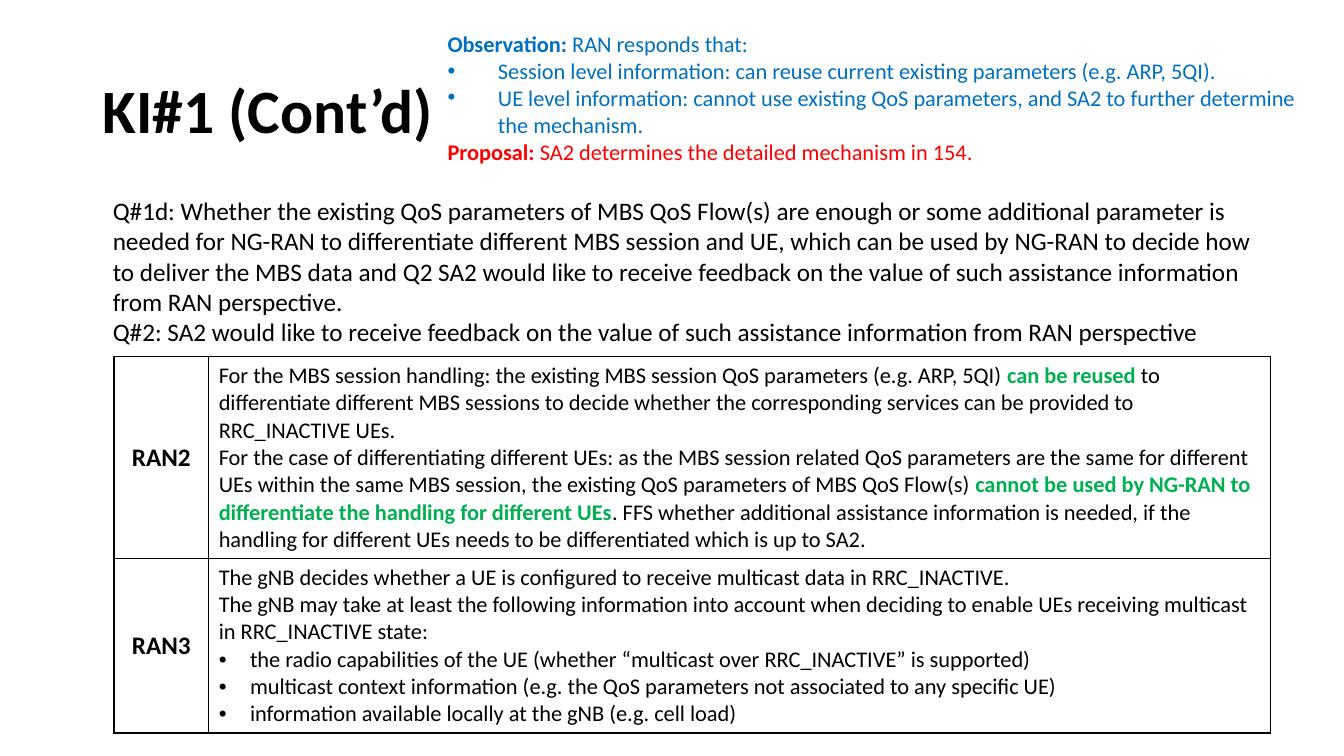
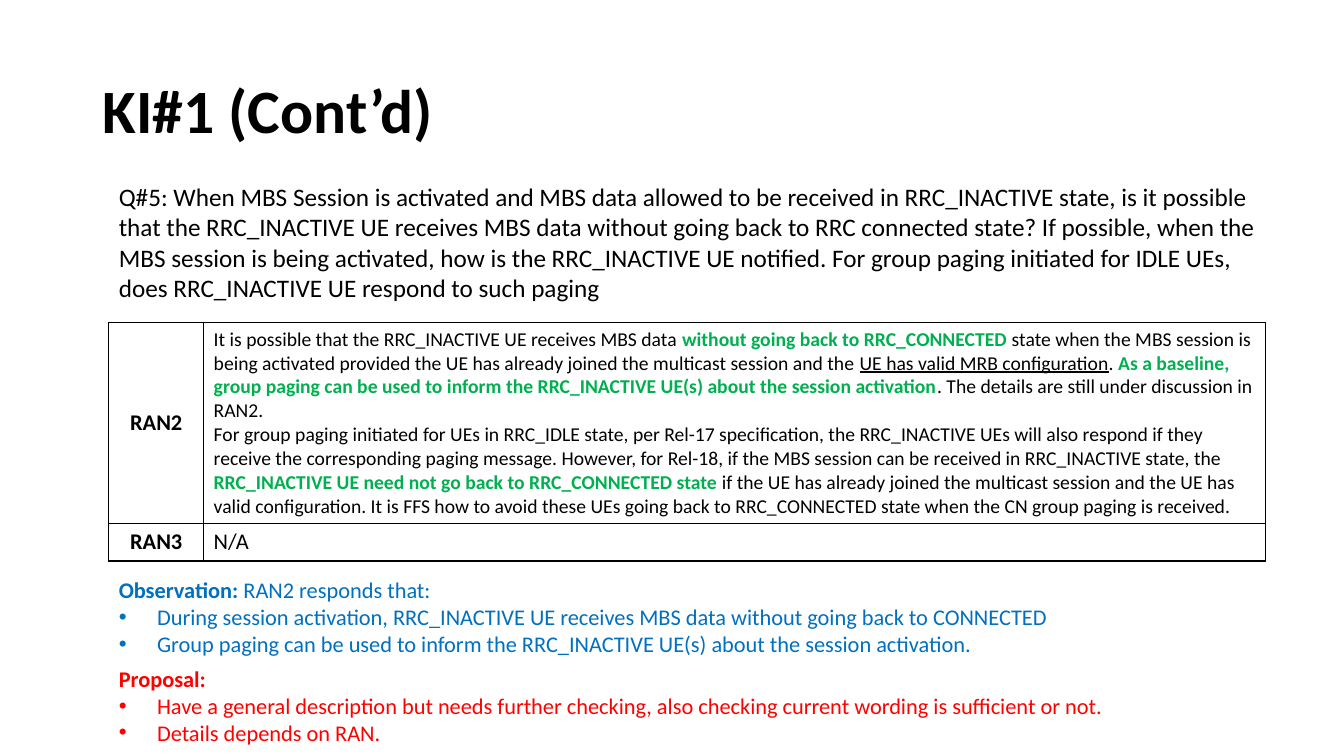
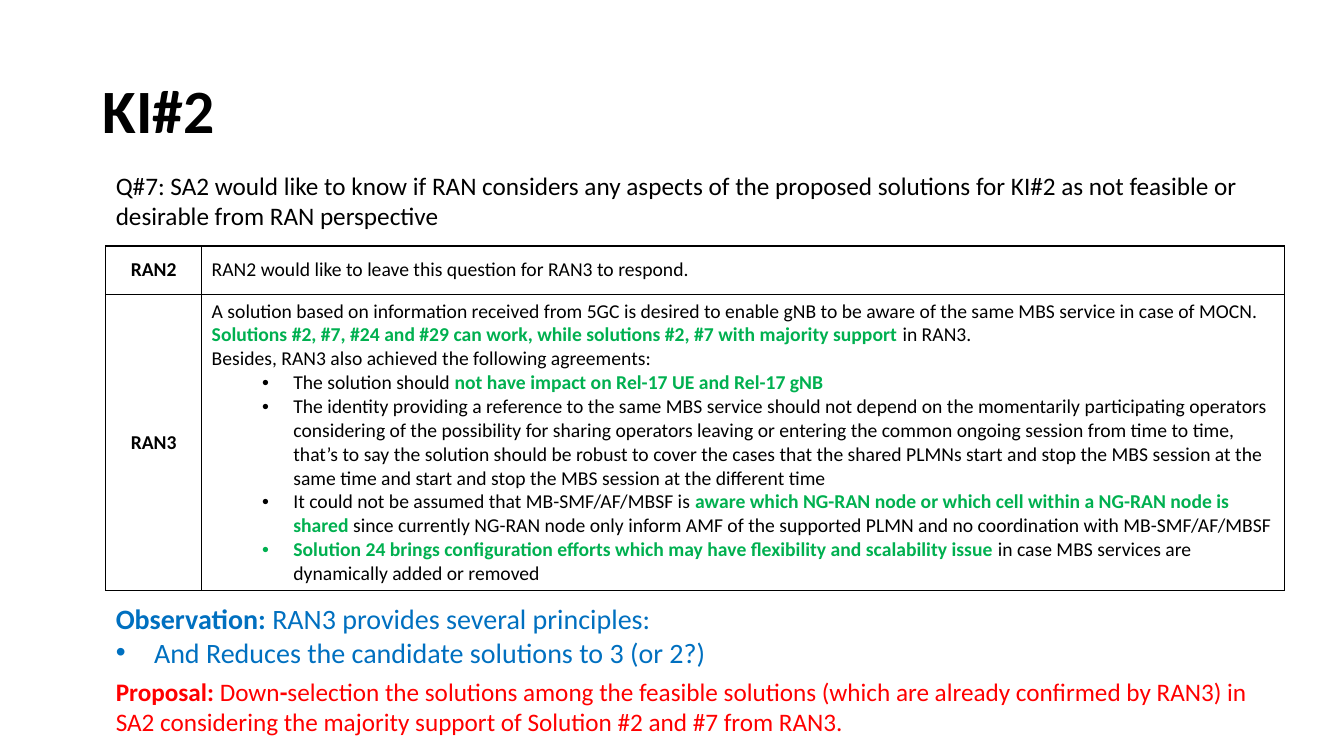
from lxml.etree import SubElement
from pptx import Presentation
from pptx.dml.color import RGBColor
from pptx.enum.text import MSO_ANCHOR, MSO_AUTO_SIZE, PP_ALIGN
from pptx.oxml.ns import qn
from pptx.util import Pt

PX = 9144  # EMU per px, 100 px to the inch
FONT = "Calibri"
COLORS = {"text": "000000", "key": "00B050", "observation": "0070C0", "proposal": "FF0000"}
TITLE_AT = (92, 40, 1150, 145)

# Markup: *bold*, ~underlined~, and "• " opens a bullet
SLIDES = [
    {
        "title": "KI#1 (Cont’d)",
        "table": {
            "at": (113, 354), "cols": (94, 1053), "label_size": 18, "left": 31,
            "rows": [
                ("RAN2", 200, 16, [
                    "For the MBS session handling: the existing MBS session QoS parameters (e.g. ARP, 5QI) *can be reused *to differentiate different MBS sessions to decide whether the corresponding services can be provided to RRC_INACTIVE UEs.",
                    "For the case of differentiating different UEs: as the MBS session related QoS parameters are the same for different UEs within the same MBS session, the existing QoS parameters of MBS QoS Flow(s) *cannot be used by NG-RAN to differentiate the handling for different UEs*. FFS whether additional assistance information is needed, if the handling for different UEs needs to be differentiated which is up to SA2.",
                ]),
                ("RAN3", 173, 16, [
                    "The gNB decides whether a UE is configured to receive multicast data in RRC_INACTIVE.",
                    "The gNB may take at least the following information into account when deciding to enable UEs receiving multicast in RRC_INACTIVE state:",
                    "• the radio capabilities of the UE (whether “multicast over RRC_INACTIVE” is supported)",
                    "• multicast context information (e.g. the QoS parameters not associated to any specific UE)",
                    "• information available locally at the gNB (e.g. cell load)",
                ]),
            ],
        },
        "boxes": [
            {"at": (102, 189, 1169, 162), "size": 18, "lines": [
                ("text", "Q#1d: Whether the existing QoS parameters of MBS QoS Flow(s) are enough or some additional parameter is needed for NG-RAN to differentiate different MBS session and UE, which can be used by NG-RAN to decide how to deliver the MBS data and Q2 SA2 would like to receive feedback on the value of such assistance information from RAN perspective."),
                ("text", "Q#2: SA2 would like to receive feedback on the value of such assistance information from RAN perspective"),
            ]},
            {"at": (434, 25, 885, 145), "size": 16, "hang": 50, "lines": [
                ("observation", "*Observation: *RAN responds that:"),
                ("observation", "• Session level information: can reuse current existing parameters (e.g. ARP, 5QI)."),
                ("observation", "• UE level information: cannot use existing QoS parameters, and SA2 to further determine the mechanism."),
                ("proposal", "*Proposal: *SA2 determines the detailed mechanism in 154."),
            ]},
        ],
    },
    {
        "title": "KI#1 (Cont’d)",
        "table": {
            "at": (108, 320), "cols": (94, 1053), "label_size": 16, "left": 31,
            "rows": [
                ("RAN2", 199, 14, [
                    "It is possible that the RRC_INACTIVE UE receives MBS data *without going back to RRC_CONNECTED *state when the MBS session is being activated provided the UE has already joined the multicast session and the ~UE has valid MRB configuration~. *As a baseline, group paging can be used to inform the RRC_INACTIVE UE(s) about the session activation*. The details are still under discussion in RAN2.",
                    "For group paging initiated for UEs in RRC_IDLE state, per Rel-17 specification, the RRC_INACTIVE UEs will also respond if they receive the corresponding paging message. However, for Rel-18, if the MBS session can be received in RRC_INACTIVE state, the *RRC_INACTIVE UE need not go back to RRC_CONNECTED state *if the UE has already joined the multicast session and the UE has valid configuration. It is FFS how to avoid these UEs going back to RRC_CONNECTED state when the CN group paging is received.",
                ]),
                ("RAN3", 37, 16, ["N/A"]),
            ],
        },
        "boxes": [
            {"at": (108, 175, 1169, 131), "size": 18, "lines": [
                ("text", "Q#5: When MBS Session is activated and MBS data allowed to be received in RRC_INACTIVE state, is it possible that the RRC_INACTIVE UE receives MBS data without going back to RRC connected state? If possible, when the MBS session is being activated, how is the RRC_INACTIVE UE notified. For group paging initiated for IDLE UEs, does RRC_INACTIVE UE respond to such paging"),
            ]},
            {"at": (108, 567, 1147, 94), "size": 16, "lines": [
                ("observation", "*Observation: *RAN2 responds that:"),
                ("observation", "• During session activation, RRC_INACTIVE UE receives MBS data without going back to CONNECTED"),
                ("observation", "• Group paging can be used to inform the RRC_INACTIVE UE(s) about the session activation."),
            ]},
            {"at": (108, 655, 1177, 94), "size": 16, "lines": [
                ("proposal", "*Proposal:*"),
                ("proposal", "• Have a general description but needs further checking, also checking current wording is sufficient or not."),
                ("proposal", "• Details depends on RAN."),
            ]},
        ],
    },
    {
        "title": "KI#2",
        "table": {
            "at": (105, 244), "cols": (95, 1074), "label_size": 14, "left": 81, "level": 1,
            "rows": [
                ("RAN2", 48, 14, ["RAN2 would like to leave this question for RAN3 to respond."]),
                ("RAN3", 293, 14, [
                    "A solution based on information received from 5GC is desired to enable gNB to be aware of the same MBS service in case of MOCN.",
                    "*Solutions #2, #7, #24 and #29 can work, while solutions #2, #7 with majority support *in RAN3.",
                    "Besides, RAN3 also achieved the following agreements:",
                    "• The solution should *not have impact on Rel-17 UE and Rel-17 gNB*",
                    "• The identity providing a reference to the same MBS service should not depend on the momentarily participating operators considering of the possibility for sharing operators leaving or entering the common ongoing session from time to time, that’s to say the solution should be robust to cover the cases that the shared PLMNs start and stop the MBS session at the same time and start and stop the MBS session at the different time",
                    "• It could not be assumed that MB-SMF/AF/MBSF is *aware which NG-RAN node or which cell within a NG-RAN node is shared* since currently NG-RAN node only inform AMF of the supported PLMN and no coordination with MB-SMF/AF/MBSF",
                    "• *Solution 24 brings configuration efforts which may have flexibility and scalability issue *in case MBS services are dynamically added or removed",
                ]),
            ],
        },
        "boxes": [
            {"at": (105, 164, 1169, 71), "size": 18, "lines": [
                ("text", "Q#7: SA2 would like to know if RAN considers any aspects of the proposed solutions for KI#2 as not feasible or desirable from RAN perspective"),
            ]},
            {"at": (105, 592, 853, 77), "size": 20, "lines": [
                ("observation", "*Observation: *RAN3 provides several principles:"),
                ("observation", "• And Reduces the candidate solutions to 3 (or 2?)"),
            ]},
            {"at": (105, 666, 1147, 71), "size": 18, "lines": [
                ("proposal", "*Proposal: *Down*-*selection the solutions among the feasible solutions (which are already confirmed by RAN3) in SA2 considering the majority support of Solution #2 and #7 from RAN3."),
            ]},
        ],
    },
]


def px(values):
    return [v * PX for v in values]


def add_bullet(p, left, hang, level):
    p.level = level
    pPr = p._p.get_or_add_pPr()
    pPr.set("marL", str(left * PX))
    pPr.set("indent", str(-hang * PX))
    SubElement(pPr, qn("a:buFont")).set("typeface", "Arial")
    SubElement(pPr, qn("a:buChar")).set("char", "•")


def write(tf, lines, size, key=None, left=38, hang=38, level=0, align=PP_ALIGN.LEFT, spacing=None):
    """Fill a text frame with (colour, marked-up text) lines; key recolours the bold parts."""
    for i, (color, text) in enumerate(lines):
        p = tf.paragraphs[0] if i == 0 else tf.add_paragraph()
        p.alignment = align
        if spacing:
            p.line_spacing = spacing
        if text.startswith("• "):
            add_bullet(p, left, hang, level)
            text = text[2:]
        for j, strong in enumerate(text.split("*")):
            for k, part in enumerate(strong.split("~")):
                if not part:
                    continue
                r = p.add_run()
                r.text = part
                bold = j % 2 == 1
                r.font.name, r.font.size, r.font.bold = FONT, Pt(size), bold
                if k % 2:
                    r.font.underline = True
                r.font.color.rgb = RGBColor.from_string(COLORS[key if bold and key else color])


def add_title(s, text):
    sp = s.shapes.title
    sp.left, sp.top, sp.width, sp.height = px(TITLE_AT)
    tf = sp.text_frame
    tf.word_wrap = True
    tf.auto_size = MSO_AUTO_SIZE.NONE
    tf.vertical_anchor = MSO_ANCHOR.MIDDLE
    write(tf, [("text", f"*{text}*")], 44, spacing=0.9)


def add_box(s, at, size, lines, hang=38):
    tf = s.shapes.add_textbox(*px(at)).text_frame
    tf.word_wrap = True
    tf.auto_size = MSO_AUTO_SIZE.SHAPE_TO_FIT_TEXT
    write(tf, lines, size, left=hang, hang=hang)


def format_cell(cell):
    cell.vertical_anchor = MSO_ANCHOR.MIDDLE
    tcPr = cell._tc.get_or_add_tcPr()
    for side in "LRTB":
        ln = SubElement(tcPr, qn(f"a:ln{side}"), w=str(Pt(1)))
        fill = SubElement(ln, qn("a:solidFill"))
        SubElement(fill, qn("a:srgbClr")).set("val", COLORS["text"])
    cell.fill.background()


def add_answers(s, at, cols, label_size, rows, left, level=0):
    size = (sum(cols), sum(row[1] for row in rows))
    table = s.shapes.add_table(len(rows), len(cols), *px(at + size)).table
    table.first_row = table.horz_banding = False
    for col, width in zip(table.columns, px(cols)):
        col.width = width
    for i, (group, height, text_size, answer) in enumerate(rows):
        table.rows[i].height = height * PX
        label, body = table.cell(i, 0), table.cell(i, 1)
        format_cell(label)
        format_cell(body)
        write(label.text_frame, [("text", f"*{group}*")], label_size, align=PP_ALIGN.CENTER)
        write(body.text_frame, [("text", line) for line in answer], text_size,
              key="key", left=left, hang=31, level=level)


def main():
    prs = Presentation()
    prs.slide_width, prs.slide_height = px((1333, 750))
    for content in SLIDES:
        s = prs.slides.add_slide(prs.slide_layouts[5])
        add_title(s, content["title"])
        add_answers(s, **content["table"])
        for box in content["boxes"]:
            add_box(s, **box)
    prs.save("out.pptx")


if __name__ == "__main__":
    main()
